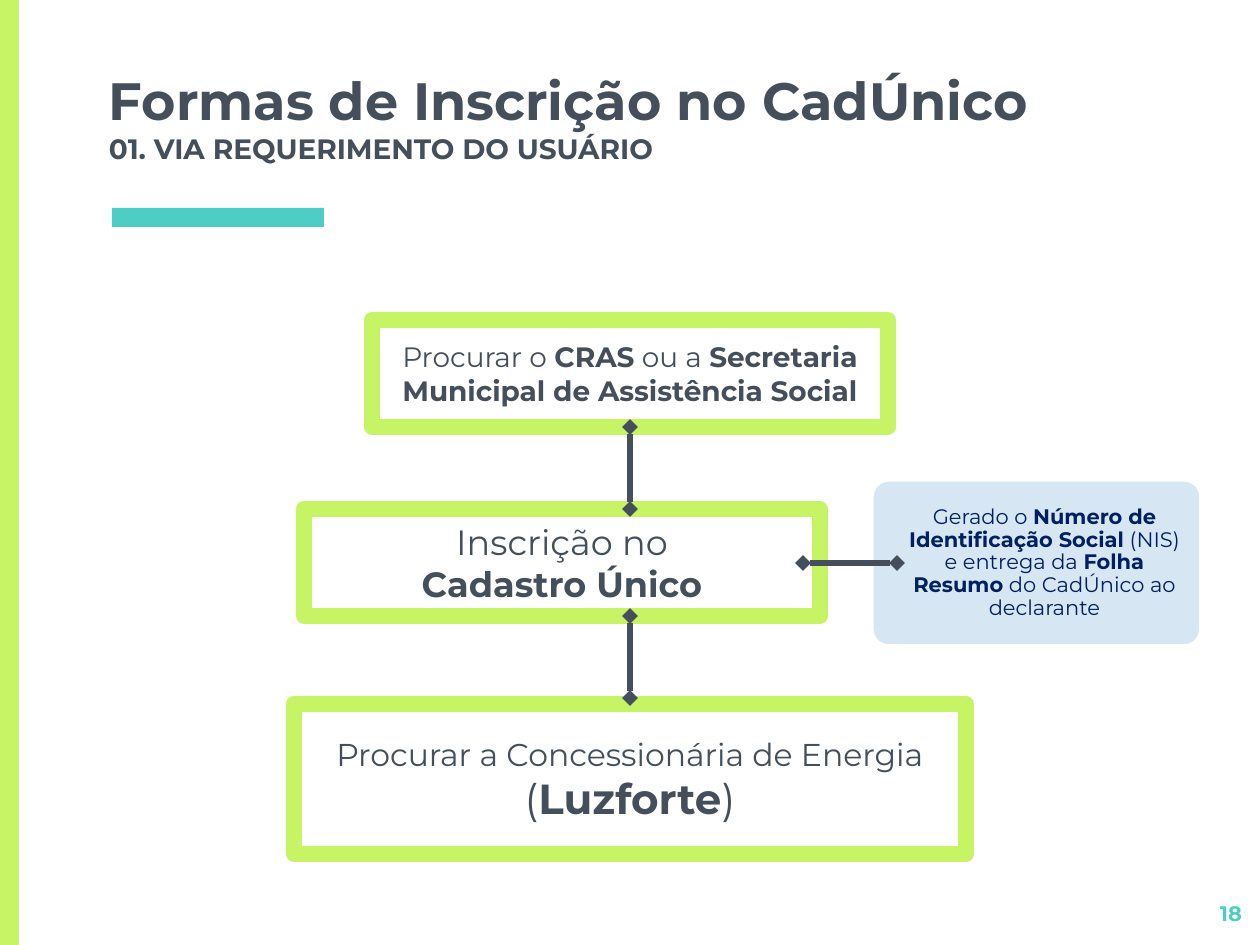
from lxml.etree import SubElement
from pptx import Presentation
from pptx.dml.color import RGBColor
from pptx.enum.shapes import MSO_CONNECTOR, MSO_SHAPE
from pptx.enum.text import MSO_ANCHOR, PP_ALIGN
from pptx.oxml.ns import qn
from pptx.util import Pt

PX = 914400 // 126
LIME, TEAL, SLATE, NAVY = "C7F464", "4ECDC4", "454F5B", "002060"
color = RGBColor.from_string


def write(shape, *lines, tint=SLATE, align=PP_ALIGN.CENTER,
          anchor=MSO_ANCHOR.MIDDLE, inset=13, space=None):
    """Fill a shape with (text, size) lines; asterisks toggle bold."""
    frame = shape.text_frame
    frame.word_wrap = True
    frame.vertical_anchor = anchor
    frame.margin_left = frame.margin_right = inset * PX
    frame.margin_top = frame.margin_bottom = inset * PX
    for row, (text, size) in enumerate(lines):
        para = frame.add_paragraph() if row else frame.paragraphs[0]
        para.alignment = align
        para.line_spacing = space
        for turn, part in enumerate(text.split("*")):
            if part:
                run = para.add_run()
                run.text = part
                run.font.name = "Montserrat"
                run.font.size = Pt(size)
                run.font.bold = turn % 2 == 1
                run.font.color.rgb = color(tint)


def block(kind, *place, fill=None, line=None, width=0):
    shape = slide.shapes.add_shape(kind, *[n * PX for n in place])
    shape.shadow.inherit = False
    if fill:
        shape.fill.solid()
        shape.fill.fore_color.rgb = color(fill)
    else:
        shape.fill.background()
    if line:
        shape.line.color.rgb = color(line)
        shape.line.width = Pt(width)
    else:
        shape.line.fill.background()
    return shape


deck = Presentation()
deck.slide_width, deck.slide_height = 1260 * PX, 945 * PX
slide = deck.slides.add_slide(deck.slide_layouts[5])

# Side band, accent bar and title
block(MSO_SHAPE.RECTANGLE, 0, 0, 19, 945, fill=LIME)
block(MSO_SHAPE.RECTANGLE, 112, 208, 212, 19, fill=TEAL)
title = slide.shapes.title
title.left, title.top, title.width, title.height = [
    n * PX for n in (96, 87, 1070, 91)]
write(title, ("*Formas de Inscrição no CadÚnico*", 30),
      ("*01. VIA REQUERIMENTO DO USUÁRIO*", 16),
      align=PP_ALIGN.LEFT, anchor=MSO_ANCHOR.BOTTOM)

# Steps
steps = [
    ((372, 320, 516, 107),
     [("Procurar o *CRAS* ou a *Secretaria Municipal de Assistência Social*", 16)]),
    ((304, 509, 516, 107),
     [("Inscrição no", 20), ("*Cadastro Único*", 20)]),
    ((294, 704, 672, 150),
     [("Procurar a Concessionária de Energia", 18), ("(*Luzforte*)", 24)]),
]
for place, lines in steps:
    step = block(MSO_SHAPE.RECTANGLE, *place, line=LIME, width=9)
    write(step, *lines)

# Side note
card = block(MSO_SHAPE.ROUNDED_RECTANGLE, 872, 480, 329, 166,
             fill="D6E6F2", line="FFFFFF", width=2)
card.adjustments[0] = 0.1
note = slide.shapes.add_textbox(*[n * PX for n in (897, 485, 295, 156)])
write(note, ("Gerado o *Número de Identificação Social* (NIS) e entrega da "
             "*Folha Resumo* do CadÚnico ao declarante", 12),
      tint=NAVY, inset=9, space=0.9)

# Links between the steps and the note
for ends in [(630, 427, 630, 509), (630, 616, 630, 698), (897, 563, 803, 563)]:
    link = slide.shapes.add_connector(
        MSO_CONNECTOR.STRAIGHT, *[n * PX for n in ends])
    link.line.color.rgb = color(SLATE)
    link.line.width = Pt(3)
    for tip in ("a:headEnd", "a:tailEnd"):
        SubElement(link.line._get_or_add_ln(), qn(tip), type="diamond")
    SubElement(link._element.spPr, qn("a:effectLst"))

# Page number
page = slide.shapes.add_textbox(*[n * PX for n in (1179, 888, 76, 57)])
write(page, ("*18*", 12), tint=TEAL, align=PP_ALIGN.RIGHT,
      anchor=MSO_ANCHOR.TOP)

deck.save("out.pptx")
